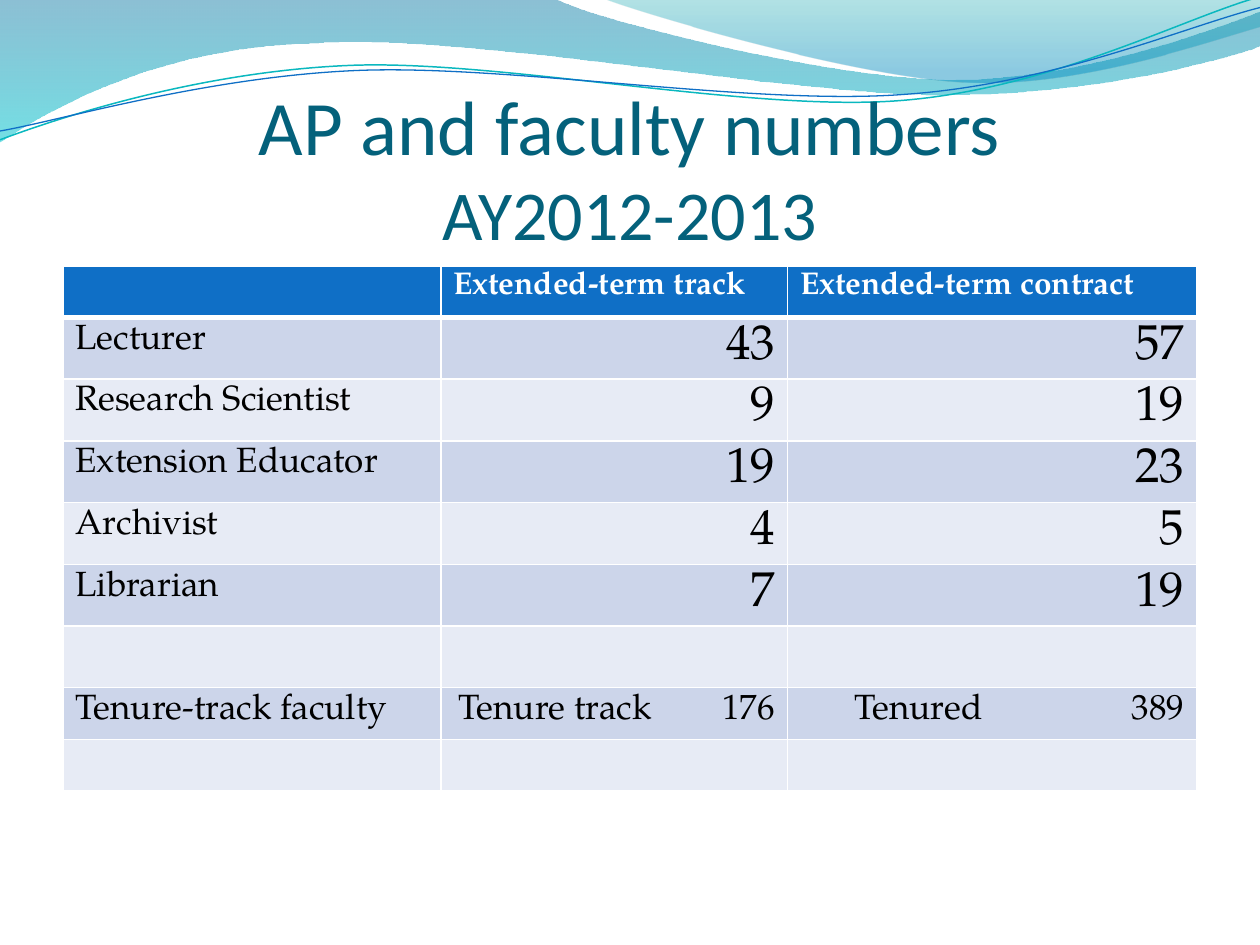
from lxml.etree import SubElement
from pptx import Presentation
from pptx.dml.color import RGBColor
from pptx.enum.text import MSO_ANCHOR, PP_ALIGN
from pptx.oxml.ns import qn
from pptx.util import Inches, Pt

COLORS = {
    "title": "04617B", "header": "0F6FC6", "odd": "CCD5EA", "even": "E7EBF5",
    "white": "FFFFFF", "text": "000000", "teal": "0AB8BF", "blue": "0F6FC6",
    "band_top": "0074A1", "band_bottom": "00C6CF",
    "wave_top": "00A1A9", "wave_bottom": "008BBF",
}
TABLE_FONT = "TeX Gyre Pagella"
MARGIN = 0.1
COLUMN_WIDTHS = [3, 2.75, 3.25]
ROW_HEIGHTS = [0.41] + [0.49] * 6 + [0.41] * 2
ROWS = [
    ("", "Extended-term track", "Extended-term contract"),
    ("Lecturer", "43", "57"),
    ("Research Scientist", "9", "19"),
    ("Extension Educator", "19", "23"),
    ("Archivist", "4", "5"),
    ("Librarian", "7", "19"),
    ("", "", ""),
    ("Tenure-track faculty", "Tenure track\t176", "Tenured\t389"),
    ("", "", ""),
]
TABBED_INDENTS = {1: 0.14, 2: 0.53}

BAND = [(0, 0), (4.4, -0.01), (4.76, 0.17, 6.64, 0.63, 7.58, 0.63),
        (8.53, 0.63, 9.58, 0.26, 10, 0.09), (10.01, 0.36),
        (9.83, 0.44, 8.7, 0.76, 7.46, 0.75), (6.22, 0.75, 3.82, 0.28, 2.57, 0.34),
        (1.29, 0.36, 0.46, 0.83, -0.01, 1.13), (0, 0)]
WAVE = [(4.79, -0.01), (5.09, 0.11, 6.82, 0.62, 7.69, 0.65),
        (8.56, 0.69, 9.61, 0.32, 10, 0.21), (10, 0), (4.79, -0.01)]
TEAL_LINE = [(0, 1.11), (0.48, 0.93, 1.58, 0.57, 2.77, 0.52),
             (3.95, 0.47, 5.93, 0.89, 7.13, 0.8), (8.33, 0.71, 9.38, 0.15, 9.98, -0.02)]
BLUE_LINE = [(0, 1.04), (0.47, 0.96, 1.64, 0.61, 2.83, 0.56),
             (4.03, 0.51, 5.97, 0.84, 7.17, 0.75), (8.36, 0.67, 9.41, 0.21, 10, 0.06)]


def color(name):
    """Return the named colour."""
    return RGBColor.from_string(COLORS[name])


def bend_segments(shape, segments):
    """Turn each run of three control points into one cubic curve."""
    lines = iter(list(shape._element.iter(qn("a:lnTo"))))
    for segment in segments:
        first = next(lines)
        if len(segment) == 2:
            continue
        curve = first.makeelement(qn("a:cubicBezTo"))
        first.addprevious(curve)
        for line in (first, next(lines), next(lines)):
            curve.append(line[0])
            line.getparent().remove(line)


def add_outline(slide, box, outline, close):
    """Draw an outline of lines and curves relative to the box."""
    points = [(Inches(box[0] + segment[i]), Inches(box[1] + segment[i + 1]))
              for segment in outline for i in range(0, len(segment), 2)]
    builder = slide.shapes.build_freeform(*points[0])
    builder.add_line_segments(points[1:], close=close)
    shape = builder.convert_to_shape()
    bend_segments(shape, outline[1:])
    shape.shadow.inherit = False
    return shape


def add_gradient_area(slide, box, outline, stops):
    """Draw a closed area with a translucent downward gradient."""
    shape = add_outline(slide, box, outline, True)
    shape.line.fill.background()
    shape.fill.gradient()
    shape.fill.gradient_angle = 270
    for stop, (position, name, opacity) in zip(shape.fill.gradient_stops, stops):
        stop.position = position
        stop.color.rgb = color(name)
    fill_colors = shape._element.spPr.iter(qn("a:srgbClr"))
    for fill_color, (position, name, opacity) in zip(fill_colors, stops):
        SubElement(fill_color, qn("a:alpha"), val=str(opacity * 1000))


def add_wave_line(slide, box, outline, name, width):
    """Draw an open curved line."""
    shape = add_outline(slide, box, outline, False)
    shape.fill.background()
    shape.line.color.rgb = color(name)
    shape.line.width = Pt(width)


def add_waves(slide, box):
    """Draw the waves across the top of the slide."""
    add_gradient_area(slide, box, BAND, [(0, "band_top", 45), (1, "band_bottom", 55)])
    add_gradient_area(slide, box, WAVE, [(0, "wave_top", 30), (0.8, "wave_bottom", 45)])
    add_wave_line(slide, box, TEAL_LINE, "teal", 0.85)
    add_wave_line(slide, box, BLUE_LINE, "blue", 0.75)


def add_run(paragraph, text, size, font, name, bold=False):
    """Add one formatted run."""
    run = paragraph.add_run()
    run.text = text
    run.font.size = Pt(size)
    run.font.name = font
    run.font.bold = bold
    run.font.color.rgb = color(name)


def add_title(slide, box):
    """Write the two-line title at the bottom of the box."""
    frame = slide.shapes.add_textbox(*map(Inches, box)).text_frame
    frame.word_wrap = True
    frame.vertical_anchor = MSO_ANCHOR.BOTTOM
    frame.margin_left = frame.margin_right = frame.margin_bottom = 0
    paragraph = frame.paragraphs[0]
    paragraph.alignment = PP_ALIGN.CENTER
    add_run(paragraph, "AP and faculty numbers", 44, "Calibri", "title")
    paragraph.add_line_break()
    add_run(paragraph, "AY2012-2013", 40, "Calibri", "title")


def set_borders(cell, row):
    """Give a cell white borders, thick below the header."""
    properties = cell._tc.get_or_add_tcPr()
    widths = {"L": 1, "R": 1, "T": 3 if row == 1 else 1, "B": 3 if row == 0 else 1}
    for side, width in widths.items():
        line = SubElement(properties, qn(f"a:ln{side}"), w=str(Pt(width)))
        fill = SubElement(line, qn("a:solidFill"))
        SubElement(fill, qn("a:srgbClr"), val=COLORS["white"])


def set_tab(cell, paragraph, column):
    """Indent the label and right-align the figure at a tab stop."""
    indent = TABBED_INDENTS[column]
    cell.margin_left = Inches(indent)
    position = Inches(COLUMN_WIDTHS[column] - indent - MARGIN)
    tabs = SubElement(paragraph._p.get_or_add_pPr(), qn("a:tabLst"))
    SubElement(tabs, qn("a:tab"), pos=str(position), algn="r")


def fill_cell(cell, row, column, text):
    """Style one table cell and write its text."""
    set_borders(cell, row)
    cell.fill.solid()
    cell.fill.fore_color.rgb = color("header" if row == 0 else "odd" if row % 2 else "even")
    cell.margin_left = cell.margin_right = Inches(MARGIN)
    cell.margin_bottom = Inches(-0.03 if text.isdigit() else 0)
    if not text:
        return
    paragraph = cell.text_frame.paragraphs[0]
    if row == 0:
        add_run(paragraph, text, 18, TABLE_FONT, "white", True)
    elif "\t" in text:
        set_tab(cell, paragraph, column)
        add_run(paragraph, text, 20, TABLE_FONT, "text")
    else:
        paragraph.alignment = PP_ALIGN.RIGHT if column else PP_ALIGN.LEFT
        add_run(paragraph, text, 28 if column else 20, TABLE_FONT, "text")


def add_numbers_table(slide, box):
    """Build the table of staff numbers."""
    table = slide.shapes.add_table(len(ROWS), len(COLUMN_WIDTHS), *map(Inches, box)).table
    for column, width in zip(table.columns, COLUMN_WIDTHS):
        column.width = Inches(width)
    for row, height in zip(table.rows, ROW_HEIGHTS):
        row.height = Inches(height)
    for row, texts in enumerate(ROWS):
        for column, text in enumerate(texts):
            fill_cell(table.cell(row, column), row, column, text)


def main():
    """Build and save the presentation."""
    presentation = Presentation()
    presentation.slide_width = Inches(10)
    presentation.slide_height = Inches(7.5)
    slide = presentation.slides.add_slide(presentation.slide_layouts[6])
    add_waves(slide, (0, 0, 10, 1.13))
    add_title(slide, (0.5, 0.5, 9, 1.52))
    add_numbers_table(slide, (0.5, 2.11, sum(COLUMN_WIDTHS), sum(ROW_HEIGHTS)))
    presentation.save("out.pptx")


if __name__ == "__main__":
    main()
